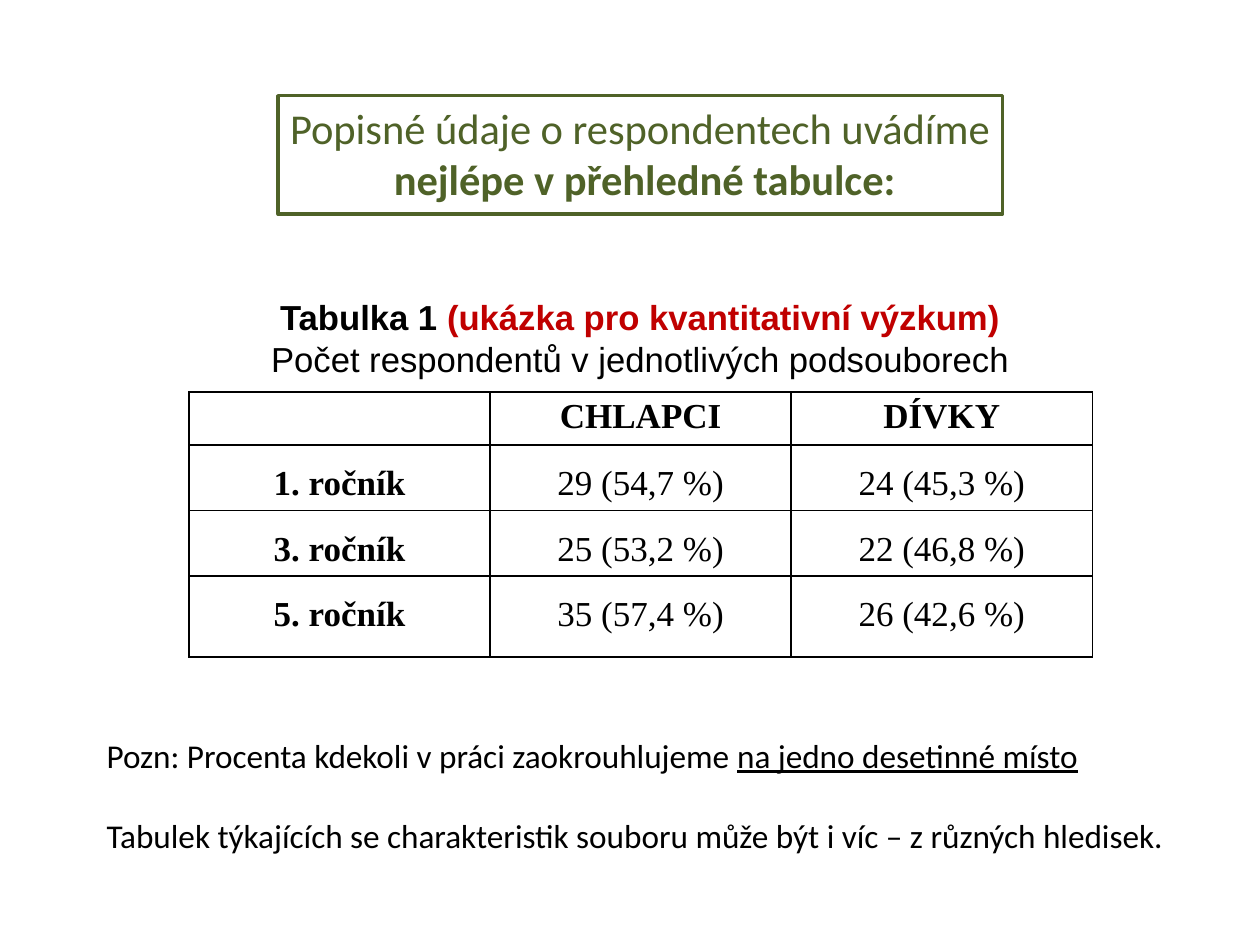
"""Build a slide with a titled table of respondents and two notes."""
from lxml import etree
from pptx import Presentation
from pptx import util as u
from pptx.dml.color import RGBColor
from pptx.enum import shapes, text
from pptx.oxml.ns import qn

COLORS = {"black": "000000", "green": "4F6228", "red": "C00000"}


class Deck:
    """Hold the style and the current slide."""

    def __init__(self):
        self.prs = Presentation()
        self.prs.slide_width, self.prs.slide_height = u.Cm(25.4), u.Cm(19.05)
        self.s = self.prs.slides.add_slide(self.prs.slide_layouts[5])

    def box(self, at):
        """Turn centimetres into lengths."""
        return [u.Cm(v) for v in at]

    def run(self, p, words, size, font="Calibri", color="black", bold=False, underline=False):
        """Add one formatted run."""
        r = p.add_run()
        r.text = words
        f = r.font
        f.size, f.name, f.bold, f.underline = u.Pt(size), font, bold, underline
        f.color.rgb = RGBColor.from_string(COLORS[color])

    def fill_text(self, tf, paragraphs, align, anchor):
        """Write paragraphs given as (space before, runs)."""
        tf.word_wrap, tf.auto_size = True, text.MSO_AUTO_SIZE.NONE
        tf.vertical_anchor = anchor
        for i, (before, runs) in enumerate(paragraphs):
            p = tf.add_paragraph() if i else tf.paragraphs[0]
            p.alignment, p.space_before = align, u.Pt(before)
            for run in runs:
                self.run(p, **run)

    def title(self, at, paragraphs):
        """Place and fill the title placeholder."""
        sp = self.s.shapes.title
        sp.left, sp.top, sp.width, sp.height = self.box(at)
        sp.text_frame.margin_top = 0
        self.fill_text(sp.text_frame, paragraphs, text.PP_ALIGN.CENTER, text.MSO_ANCHOR.TOP)

    def note(self, at, paragraphs):
        """Add a left-aligned text box."""
        sp = self.s.shapes.add_textbox(*self.box(at))
        self.fill_text(sp.text_frame, paragraphs, text.PP_ALIGN.LEFT, text.MSO_ANCHOR.MIDDLE)

    def border(self, cell):
        """Draw a thin line on each side of a cell."""
        tcPr = cell._tc.get_or_add_tcPr()
        for side in ("lnL", "lnR", "lnT", "lnB"):
            ln = etree.SubElement(tcPr, qn(f"a:{side}"), w=str(u.Pt(1)))
            fill = etree.SubElement(ln, qn("a:solidFill"))
            etree.SubElement(fill, qn("a:srgbClr"), val=COLORS["black"])

    def table(self, at, heights, rows):
        """Add a bordered table with bold headings."""
        tbl = self.s.shapes.add_table(len(rows), len(rows[0]), *self.box(at)).table
        tbl.first_row = tbl.horz_banding = False
        for i, row in enumerate(rows):
            tbl.rows[i].height = u.Cm(heights[i])
            for j, words in enumerate(row):
                cell = tbl.cell(i, j)
                self.border(cell)
                cell.fill.background()
                cell.margin_left = cell.margin_right = u.Cm(0.18)
                cell.margin_top = cell.margin_bottom = 0
                p = cell.text_frame.paragraphs[0]
                p.alignment = text.PP_ALIGN.CENTER
                p.line_spacing = 1.5 if i else 1.15
                if words:
                    self.run(p, words, 20, "Times New Roman", bold=i == 0 or j == 0)

    def frame(self, at, color, width):
        """Add an unfilled rectangle."""
        sp = self.s.shapes.add_shape(shapes.MSO_SHAPE.RECTANGLE, *self.box(at))
        sp.shadow.inherit = False
        sp.fill.background()
        sp.line.color.rgb = RGBColor.from_string(COLORS[color])
        sp.line.width = u.Pt(width)


def main():
    """Compose and save the slide."""
    deck = Deck()
    head = dict(size=24.3, color="green")
    caption = dict(size=19.8, font="Arial")
    deck.title((1.09, 2.06, 23.62, 5.6), [
        (0, [dict(words="Popisné údaje o respondentech uvádíme", **head)]),
        (0, [dict(words=" nejlépe v přehledné tabulce:", bold=True, **head)]),
        (52.5, [dict(words="Tabulka 1 ", bold=True, **caption),
                dict(words="(ukázka pro kvantitativní výzkum)", bold=True, color="red", **caption)]),
        (0, [dict(words="Počet respondentů v jednotlivých podsouborech", **caption)]),
    ])
    deck.table((3.81, 7.9, 18.21, 5.34), (1.07, 1.32, 1.32, 1.63), [
        ("", "CHLAPCI", "DÍVKY"),
        ("1. ročník", "29 (54,7 %)", "24 (45,3 %)"),
        ("3. ročník", "25 (53,2 %)", "22 (46,8 %)"),
        ("5. ročník", "35 (57,4 %)", "26 (42,6 %)"),
    ])
    deck.note((1.9, 14.12, 22.4, 3.81), [
        (0, [dict(words="Pozn: Procenta kdekoli v práci zaokrouhlujeme ", size=19),
             dict(words="na jedno desetinné místo", size=19, underline=True)]),
        (23, [dict(words="Tabulek týkajících se charakteristik souboru může být i víc"
                         " – z různých hledisek.", size=19)]),
    ])
    deck.frame((5.61, 1.93, 14.6, 2.39), "green", 2)
    deck.prs.save("out.pptx")


if __name__ == "__main__":
    main()
